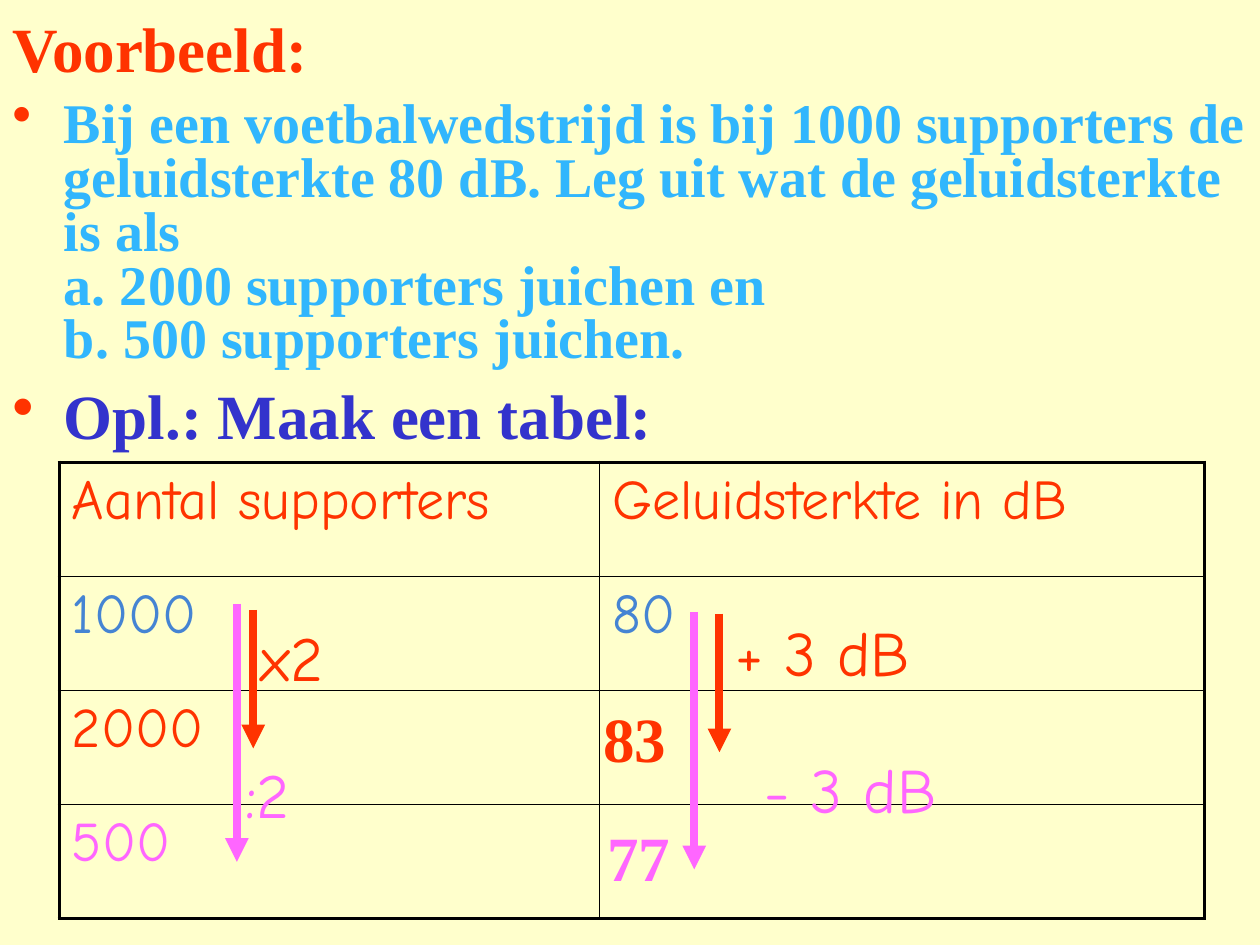
"""Build the slide with the worked example on sound levels of supporters."""
import pptx
import pptx.dml.color
import pptx.enum.shapes
import pptx.enum.text
import pptx.oxml.ns
import pptx.util
from lxml import etree
from pptx.util import Inches

RGBColor = pptx.dml.color.RGBColor
CREAM = RGBColor(0xFF, 0xFF, 0xCC)
RED = RGBColor(0xFF, 0x33, 0x00)
SKY = RGBColor(0x31, 0xB6, 0xFD)
NAVY = RGBColor(0x33, 0x33, 0xCC)
BLUE = RGBColor(0x45, 0x84, 0xD3)
PINK = RGBColor(0xFF, 0x66, 0xFF)
BLACK = RGBColor(0, 0, 0)
SERIF = "Times New Roman"
COMIC = "Comic Neue"
QUESTION = (
    "Bij een voetbalwedstrijd is bij 1000 supporters de geluidsterkte 80 dB. "
    "Leg uit wat de geluidsterkte is als\v"
    "a. 2000 supporters juichen en\vb. 500 supporters juichen."
)
ROWS = [
    ("Aantal supporters", "Geluidsterkte in dB", RED),
    ("1000", "80", BLUE),
    ("2000", "", RED),
    ("500", "", PINK),
]


def add_child(parent, tag, **attrs):
    """Append a DrawingML element to parent and return it."""
    return etree.SubElement(parent, pptx.oxml.ns.qn(tag), attrs)


def format_runs(p, size, font, color):
    """Format every run of a paragraph; the serif font is bold."""
    for r in p.runs:
        r.font.size = pptx.util.Pt(size)
        r.font.name = font
        r.font.bold = font == SERIF
        r.font.color.rgb = color


def add_text(s, box, text, color, font=SERIF, size=36, before=4):
    """Add a wrapped text box and return its paragraph."""
    tf = s.shapes.add_textbox(*map(Inches, box)).text_frame
    tf.word_wrap = True
    p = tf.paragraphs[0]
    p.text = text
    p.space_before = pptx.util.Pt(before)
    format_runs(p, size, font, color)
    return p


def add_bullet(p):
    """Give a paragraph a red bullet with a hanging indent."""
    pPr = p._p.get_or_add_pPr()
    pPr.set("marL", str(Inches(0.41)))
    pPr.set("indent", str(-Inches(0.41)))
    add_child(add_child(pPr, "a:buClr"), "a:srgbClr", val=str(RED))
    add_child(pPr, "a:buChar", char="•")


def add_arrow(s, x, top, bottom, color):
    """Add a thick arrow that points straight down."""
    sp = s.shapes.add_connector(
        pptx.enum.shapes.MSO_CONNECTOR.STRAIGHT,
        Inches(x), Inches(top), Inches(x), Inches(bottom),
    )
    sp.line.color.rgb = color
    sp.line.width = pptx.util.Pt(4.5)
    add_child(sp.line._get_or_add_ln(), "a:tailEnd", type="triangle")
    add_child(sp._element.spPr, "a:effectLst")


def set_borders(cell, outer_sides):
    """Draw cell borders, thicker on the outer sides of the table."""
    tcPr = cell._tc.get_or_add_tcPr()
    for side in "LRTB":
        width = pptx.util.Pt(2.25 if side in outer_sides else 1)
        ln = add_child(tcPr, "a:ln" + side, w=str(width))
        add_child(add_child(ln, "a:solidFill"), "a:srgbClr", val=str(BLACK))


def add_supporter_table(s):
    """Add the table of supporters against sound level."""
    table = s.shapes.add_table(
        len(ROWS), 2, Inches(0.47), Inches(3.67), Inches(9.09), Inches(3.62)
    ).table
    table.first_row = table.horz_banding = False
    for column, width in zip(table.columns, (4.29, 4.8)):
        column.width = Inches(width)
    for i, (*texts, color) in enumerate(ROWS):
        for j, text in enumerate(texts):
            cell = table.cell(i, j)
            outer = "LR"[j] + {0: "T", len(ROWS) - 1: "B"}.get(i, "")
            set_borders(cell, outer)
            cell.fill.background()
            p = cell.text_frame.paragraphs[0]
            p.text = text
            p.space_before = pptx.util.Pt(1)
            format_runs(p, 32, COMIC, color)


def main():
    """Build and save the slide."""
    prs = pptx.Presentation()
    prs.slide_width, prs.slide_height = Inches(10), Inches(7.5)
    s = prs.slides.add_slide(prs.slide_layouts[6])
    s.background.fill.solid()
    s.background.fill.fore_color.rgb = CREAM

    title = add_text(s, (0, 0, 10, 0.75), "Voorbeeld:", RED, before=0)
    title._p.getparent().bodyPr.set("anchor", "ctr")
    question = add_text(s, (0, 0.75, 10, 2.42), QUESTION, SKY, size=32, before=3)
    question.line_spacing = 0.8
    add_bullet(question)
    add_bullet(add_text(s, (0, 2.94, 9.33, 0.5), "Opl.: Maak een tabel:", NAVY))
    add_supporter_table(s)

    add_text(s, (4.69, 5.5, 0.87, 0.63), "83", RED)
    add_text(s, (4.72, 6.45, 0.87, 0.63), "77", PINK)
    steps = [
        ((2.01, 4.84, 5.94), (1.97, 4.86, 0.87, 0.63), "x2", RED),
        ((5.71, 4.87, 5.97), (5.74, 4.82, 1.81, 0.63), "+ 3 dB", RED),
        ((1.88, 4.79, 6.84), (1.85, 5.95, 0.87, 0.63), ":2", PINK),
        ((5.51, 4.86, 6.9), (5.97, 5.91, 1.81, 0.63), "- 3 dB", PINK),
    ]
    for arrow, box, text, color in steps:
        add_arrow(s, *arrow, color)
        add_text(s, box, text, color, COMIC)

    prs.save("out.pptx")


if __name__ == "__main__":
    main()
